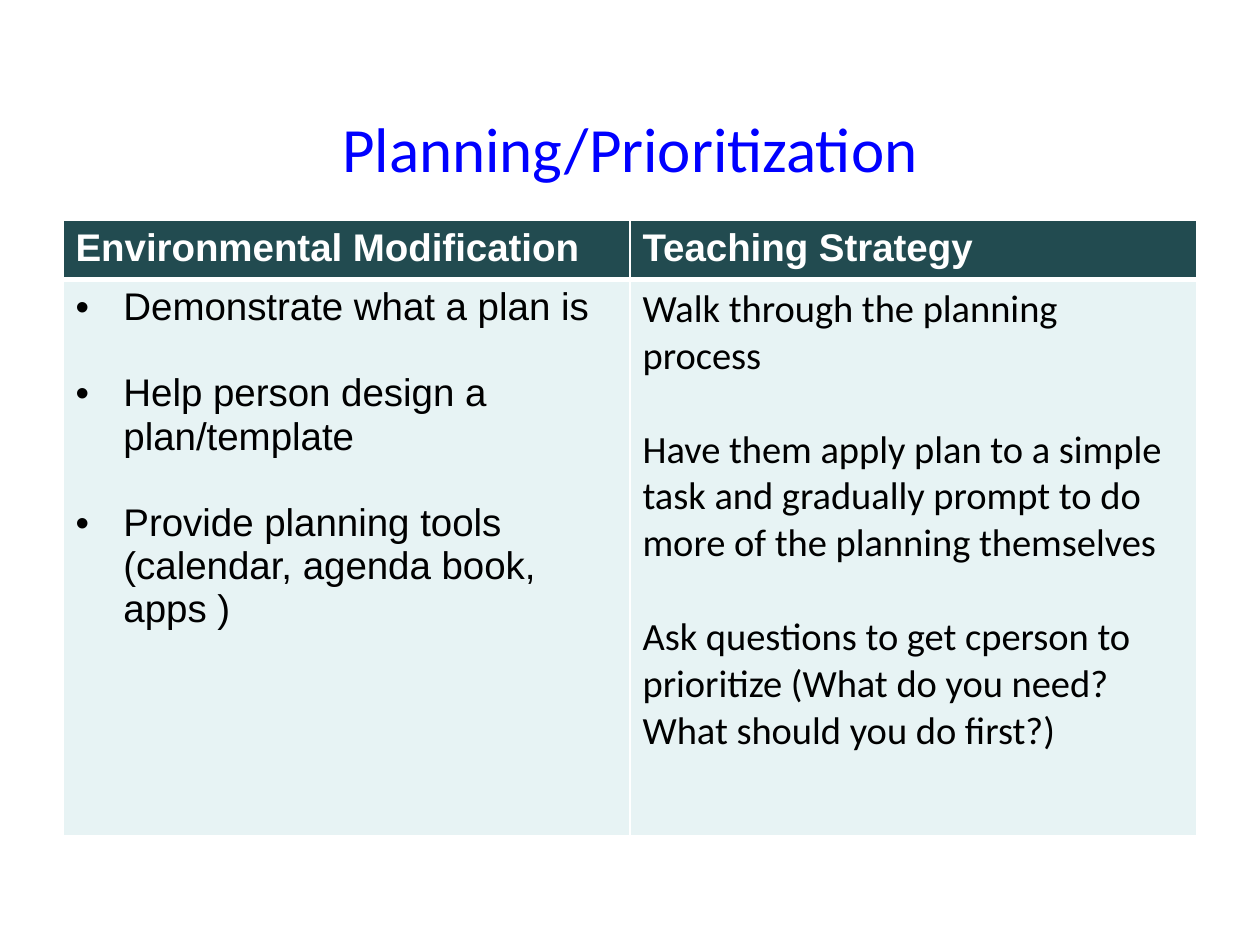
import pptx
import pptx.dml.color
import pptx.enum.text
import pptx.oxml
import pptx.oxml.ns
import pptx.util
from pptx.util import Inches

COLORS = {
    "title": "0000FF",
    "header": "224B50",
    "body": "E7F3F4",
    "border": "FFFFFF",
    "light": "FFFFFF",
    "dark": "000000",
}
HEADINGS = ["Environmental Modification", "Teaching Strategy"]
MODIFICATIONS = [
    "Demonstrate what a plan is",
    "Help person design a plan/template",
    "Provide planning tools (calendar, agenda book, apps )",
]
STRATEGIES = [
    "Walk through the planning process",
    "Have them apply plan to a simple task and gradually prompt to do "
    "more of the planning themselves",
    "Ask questions to get cperson to prioritize (What do you need? "
    "What should you do first?)",
]


def rgb(name):
    return pptx.dml.color.RGBColor.from_string(COLORS[name])


def add_bullet(para):
    props = para._p.get_or_add_pPr()
    props.set("marL", str(Inches(0.38)))
    props.set("indent", str(-Inches(0.38)))
    namespace = pptx.oxml.ns.nsdecls("a")
    props.append(pptx.oxml.parse_xml(f'<a:buFont {namespace} typeface="Arial"/>'))
    props.append(pptx.oxml.parse_xml(f'<a:buChar {namespace} char="•"/>'))


def write_text(frame, texts, *, font="Arial", size=22, color="dark",
               bold=False, align=None, gap=0, bullet=False):
    """Write one paragraph per text, with gap points between them."""
    for index, text in enumerate(texts):
        para = frame.paragraphs[0] if index == 0 else frame.add_paragraph()
        para.alignment = align
        if gap and index < len(texts) - 1:
            para.space_after = pptx.util.Pt(gap)
        if bullet:
            add_bullet(para)
        span = para.add_run()
        span.text = text
        span.font.name = font
        span.font.size = pptx.util.Pt(size)
        span.font.bold = bold
        span.font.color.rgb = rgb(color)


def style_cell(cell, fill, top, bottom):
    """Set the border widths in points, then the fill."""
    props = cell._tc.get_or_add_tcPr()
    for side, width in (("L", 1), ("R", 1), ("T", top), ("B", bottom)):
        props.append(pptx.oxml.parse_xml(
            f'<a:ln{side} {pptx.oxml.ns.nsdecls("a")} w="{pptx.util.Pt(width)}">'
            f'<a:solidFill><a:srgbClr val="{COLORS["border"]}"/></a:solidFill>'
            f'</a:ln{side}>'))
    cell.fill.solid()
    cell.fill.fore_color.rgb = rgb(fill)


def add_title(page, text):
    title = page.shapes.title
    title.left, title.top = Inches(0.75), Inches(0.67)
    title.width, title.height = Inches(8.5), Inches(1)
    title.text_frame.vertical_anchor = pptx.enum.text.MSO_ANCHOR.MIDDLE
    write_text(title.text_frame, [text], font="Calibri", size=36,
               color="title", align=pptx.enum.text.PP_ALIGN.CENTER)


def add_strategy_table(page):
    table = page.shapes.add_table(
        2, 2, Inches(0.5), Inches(1.75), Inches(9), Inches(4.88)).table
    table.rows[0].height = Inches(0.47)
    table.rows[1].height = Inches(4.41)

    # Header row
    for column, heading in enumerate(HEADINGS):
        cell = table.cell(0, column)
        style_cell(cell, "header", top=1, bottom=3)
        write_text(cell.text_frame, [heading], color="light", bold=True)

    # Body row
    for column in range(2):
        style_cell(table.cell(1, column), "body", top=3, bottom=1)
    write_text(table.cell(1, 0).text_frame, MODIFICATIONS, gap=24.6, bullet=True)
    write_text(table.cell(1, 1).text_frame, STRATEGIES, font="Calibri", gap=26.8)


def main():
    deck = pptx.Presentation()
    deck.slide_width, deck.slide_height = Inches(10), Inches(7.5)
    page = deck.slides.add_slide(deck.slide_layouts[5])
    add_title(page, "Planning/Prioritization")
    add_strategy_table(page)
    deck.save("out.pptx")


if __name__ == "__main__":
    main()
